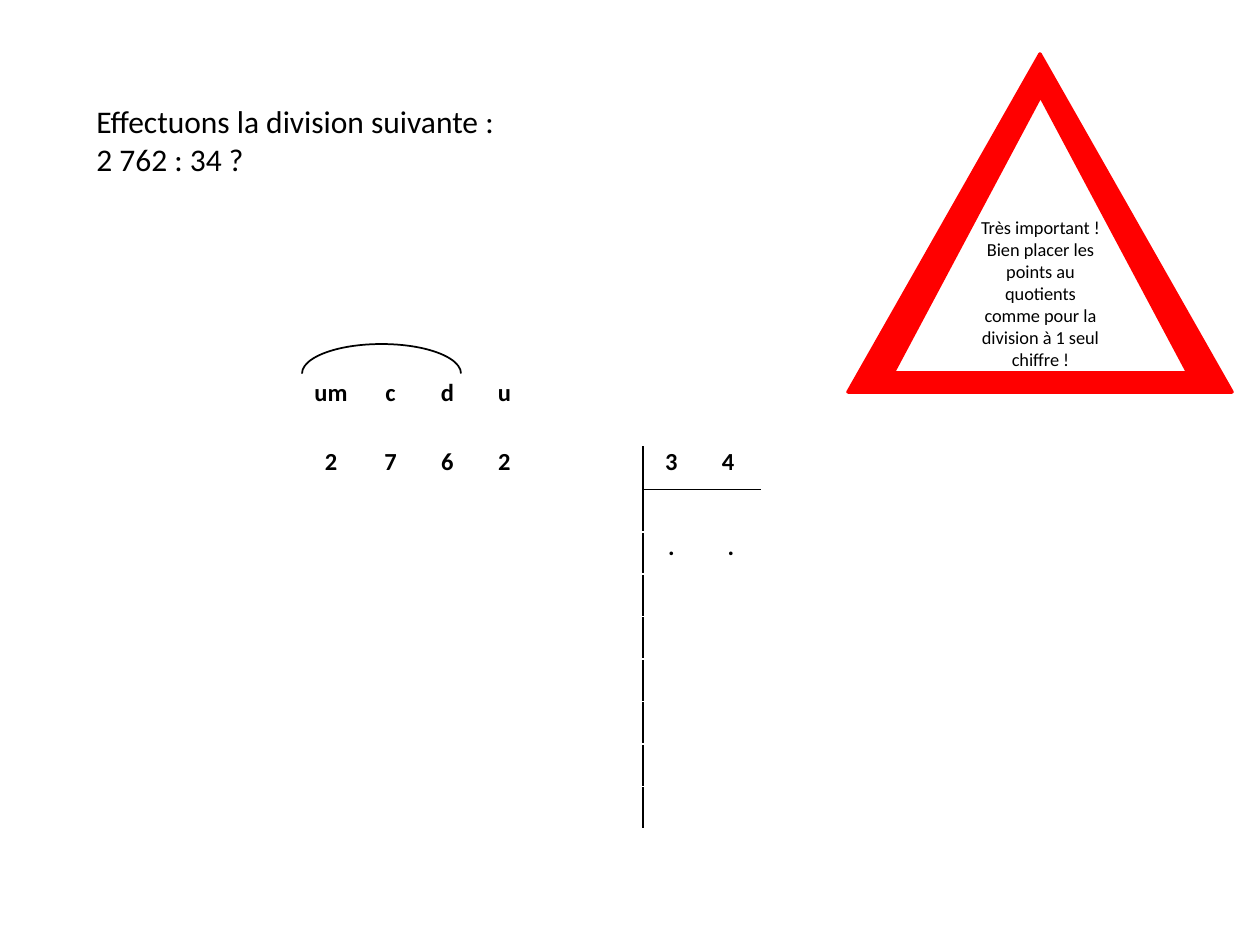
from lxml import etree
from pptx import Presentation
from pptx.dml.color import RGBColor
from pptx.enum.shapes import MSO_SHAPE
from pptx.enum.text import MSO_ANCHOR, PP_ALIGN
from pptx.oxml.ns import qn
from pptx.util import Emu, Pt

ARC = MSO_SHAPE.ARC
TRIANGLE = MSO_SHAPE.ISOSCELES_TRIANGLE
CENTER = PP_ALIGN.CENTER
LEFT = PP_ALIGN.LEFT
MIDDLE = MSO_ANCHOR.MIDDLE
TOP = MSO_ANCHOR.TOP

COLORS = {"ink": "000000", "paper": "FFFFFF", "warning": "FF0000"}
FONT = "Calibri"

COLUMNS = [57, 62, 57, 57, 57, 33, 77, 57, 62, 50, 57]
HEADER_HEIGHT = 69
BODY_ROWS = 9
DIVISOR = 7
ENTRIES = {
    (0, 1): "um", (0, 2): "c", (0, 3): "d", (0, 4): "u",
    (1, 1): "2", (1, 2): "7", (1, 3): "6", (1, 4): "2",
    (1, DIVISOR): "3", (1, DIVISOR + 1): "4 ",
    (3, DIVISOR): ".", (3, DIVISOR + 1): ".",
}


def px(value):
    return Emu(round(value * 914400 / 126))


def rgb(name):
    return RGBColor.from_string(COLORS[name])


def write(tf, *lines, size, bold=False, align=LEFT):
    tf.word_wrap = True
    for i, line in enumerate(lines):
        p = tf.add_paragraph() if i else tf.paragraphs[0]
        p.alignment = align
        r = p.add_run()
        r.text = line
        r.font.name = FONT
        r.font.size = Pt(size)
        r.font.bold = bold
        r.font.color.rgb = rgb("ink")


def add_outline(s, kind, x, y, w, h, line, width, fill=None):
    sp = s.shapes.add_shape(kind, px(x), px(y), px(w), px(h))
    sp.shadow.inherit = False
    if fill:
        sp.fill.solid()
        sp.fill.fore_color.rgb = rgb(fill)
    else:
        sp.fill.background()
    sp.line.color.rgb = rgb(line)
    sp.line.width = Pt(width)
    return sp


def set_border(cell, side):
    tc_pr = cell._tc.get_or_add_tcPr()
    ln = etree.Element(qn(f"a:ln{side}"), w=str(Pt(1)))
    fill = etree.SubElement(ln, qn("a:solidFill"))
    etree.SubElement(fill, qn("a:srgbClr"), val=COLORS["ink"])
    position = len(tc_pr.findall(qn("a:lnL")))
    tc_pr.insert(position, ln)


def add_question(s, x, y, w, h):
    tf = s.shapes.add_textbox(px(x), px(y), px(w), px(h)).text_frame
    write(tf, "Effectuons la division suivante :", "2 762 : 34 ?", size=18)


def add_division(s, x, y, body_height):
    row_height = body_height / BODY_ROWS
    frame = s.shapes.add_table(BODY_ROWS + 1, len(COLUMNS), px(x), px(y),
                               px(sum(COLUMNS)), px(HEADER_HEIGHT + body_height))
    table = frame.table
    table.first_row = False
    table.horz_banding = False
    for column, width in zip(table.columns, COLUMNS):
        column.width = px(width)
    for i, row in enumerate(table.rows):
        row.height = px(row_height if i else HEADER_HEIGHT)
        for j, cell in enumerate(row.cells):
            cell.margin_left = cell.margin_right = px(9)
            cell.margin_top = cell.margin_bottom = 0
            cell.vertical_anchor = TOP
            cell.fill.solid()
            cell.fill.fore_color.rgb = rgb("paper")
            if (i, j) in ENTRIES:
                write(cell.text_frame, ENTRIES[i, j], size=14, bold=True, align=CENTER)
            else:
                cell.text_frame.paragraphs[0].font.size = Pt(14)
            if i and j == DIVISOR - 1:
                set_border(cell, "R")
            if i and j == DIVISOR:
                set_border(cell, "L")
            if j in (DIVISOR, DIVISOR + 1) and i in (1, 2):
                set_border(cell, "B" if i == 1 else "T")
    arc = add_outline(s, ARC, x + 59, y - 34, 159, 59, "ink", 1)
    arc.adjustments[0] = 107.94
    arc.adjustments[1] = 0


def add_warning(s, x, y, w, h):
    add_outline(s, TRIANGLE, x, y, w, h, "warning", 2, "warning")
    sp = add_outline(s, TRIANGLE, x + 45, y + 42, w - 89, h - 61, "warning", 2, "paper")
    tf = sp.text_frame
    tf.vertical_anchor = MIDDLE
    tf.margin_bottom = px(28)
    write(tf, "Très important !",
          "Bien placer les points au quotients comme pour la division à 1 seul chiffre !",
          size=10.5, align=CENTER)


def main():
    prs = Presentation()
    prs.slide_width = px(1260)
    prs.slide_height = px(945)
    s = prs.slides.add_slide(prs.slide_layouts[6])
    add_division(s, 243, 378, 382)
    add_warning(s, 848, 54, 384, 338)
    add_question(s, 84, 96, 615, 89)
    prs.save("out.pptx")


if __name__ == "__main__":
    main()
